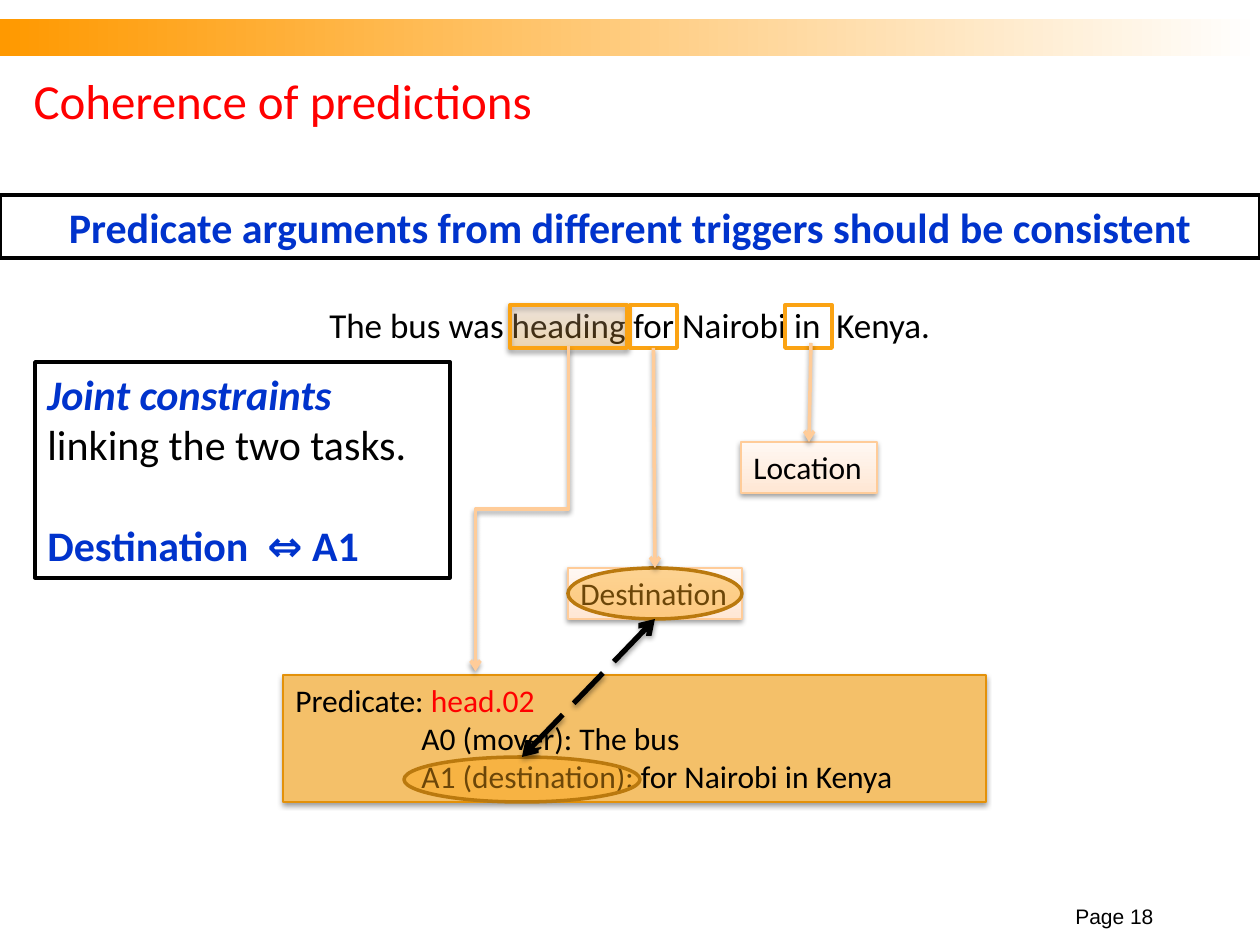
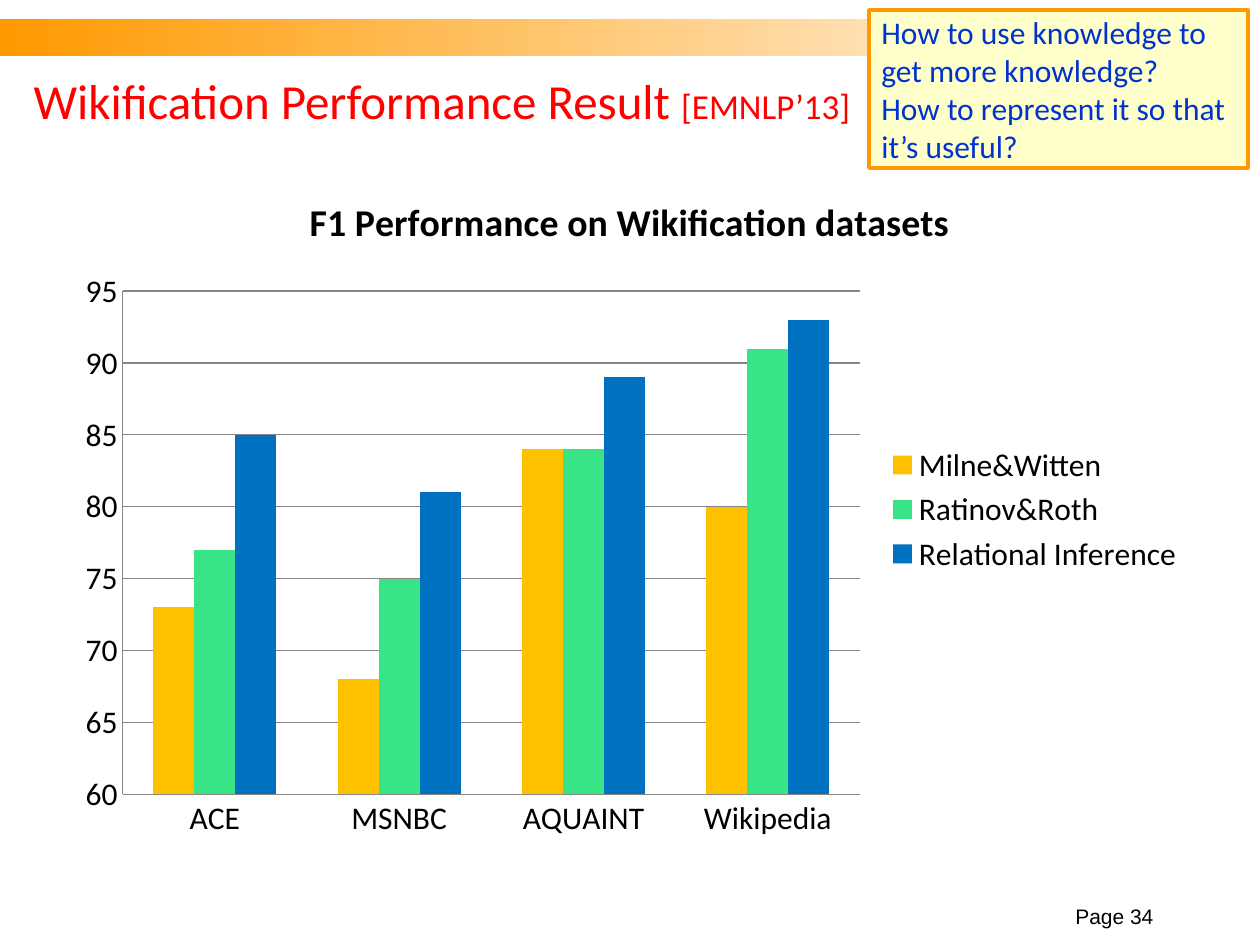
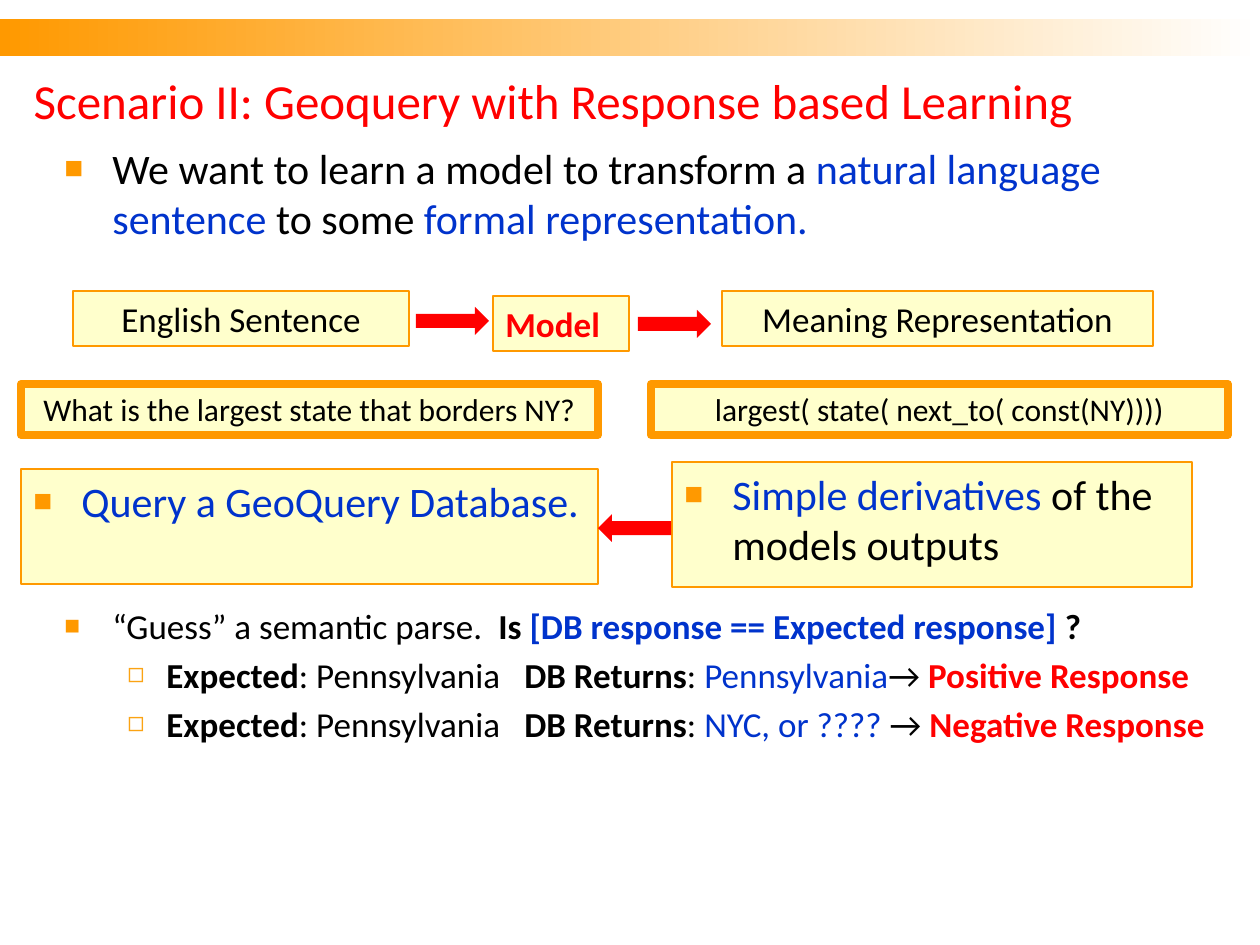
from dataclasses import dataclass
from itertools import zip_longest

from lxml.etree import SubElement
from pptx import Presentation
from pptx.chart.data import CategoryChartData
from pptx.dml.color import RGBColor
from pptx.enum.chart import XL_CHART_TYPE, XL_LEGEND_POSITION, XL_TICK_MARK
from pptx.enum.dml import MSO_LINE
from pptx.enum.shapes import MSO_CONNECTOR as LINK, MSO_SHAPE as SHAPE
from pptx.enum.text import MSO_ANCHOR as ANCHOR, MSO_AUTO_SIZE, PP_ALIGN as ALIGN
from pptx.oxml.ns import qn
from pptx.util import Emu, Pt

SCALE = 914400 / 126  # EMU in one px


@dataclass(frozen=True)
class Theme:
    font: str = "Calibri"
    footer_font: str = "Arial"
    title_size: int = 28
    large: int = 24
    medium: int = 20
    small: int = 18
    footer_size: int = 12
    chart_title_size: float = 21.6
    black: RGBColor = RGBColor.from_string("000000")
    white: RGBColor = RGBColor.from_string("FFFFFF")
    red: RGBColor = RGBColor.from_string("FF0000")
    blue: RGBColor = RGBColor.from_string("0033CC")
    orange: RGBColor = RGBColor.from_string("FF9900")
    amber: RGBColor = RGBColor.from_string("FBA313")
    brown: RGBColor = RGBColor.from_string("BA790E")
    cream: RGBColor = RGBColor.from_string("FFFFCC")
    peach: RGBColor = RGBColor.from_string("FFCC99")
    pink: RGBColor = RGBColor.from_string("FFE7D4")
    pale_pink: RGBColor = RGBColor.from_string("FFF8F3")
    tan: RGBColor = RGBColor.from_string("FFD7BB")
    gold: RGBColor = RGBColor.from_string("F4C069")
    dark_gold: RGBColor = RGBColor.from_string("E3910A")
    gray: RGBColor = RGBColor.from_string("868686")
    bars: tuple = ("FFC000", "38E486", "0070C0")


theme = Theme()
BLACK, RED, BLUE = theme.black, theme.red, theme.blue

# Bullets: sign, colour, size in percent, left margin and hang in px
SQUARE = ("■", theme.orange, 75, 48, 48)
HOLLOW = ("◻", theme.amber, 80, 102, 39)


def write(frame, lines, size, align=ALIGN.LEFT, anchor=ANCHOR.TOP, bullets=(),
          font=theme.font, wrap=True):
    """Fill a frame; each line is a list of (text, colour, style letters)."""
    frame.auto_size = MSO_AUTO_SIZE.NONE
    frame.word_wrap = wrap
    frame.vertical_anchor = anchor
    for number, (spans, bullet) in enumerate(zip_longest(lines, bullets)):
        para = frame.add_paragraph() if number else frame.paragraphs[0]
        para.alignment = align
        if bullet:
            sign, color, percent, margin, hang = bullet
            props = para._p.get_or_add_pPr()
            props.set("marL", str(round(margin * SCALE)))
            props.set("indent", str(round(-hang * SCALE)))
            SubElement(SubElement(props, qn("a:buClr")), qn("a:srgbClr"), val=str(color))
            SubElement(props, qn("a:buSzPct"), val=str(percent * 1000))
            SubElement(props, qn("a:buFont"), typeface=theme.footer_font)
            SubElement(props, qn("a:buChar"), char=sign)
            if number:
                para.space_before = Pt(size * 0.2)
        for text, color, style in spans:
            span = para.add_run()
            span.text = text
            span.font.name = font
            span.font.size = Pt(size)
            span.font.color.rgb = color
            span.font.bold = "b" in style
            span.font.italic = "i" in style


def add_box(page, place, fill=None, line=None, width=0.75, kind=SHAPE.RECTANGLE,
            angle=0, alpha=None):
    """Add a shape; a pair of colours as fill makes a gradient."""
    box = page.shapes.add_shape(kind, *[Emu(round(n * SCALE)) for n in place])
    if fill is None:
        box.fill.background()
    elif isinstance(fill, list):
        box.fill.gradient()
        box.fill.gradient_angle = angle
        for stop, color in zip(box.fill.gradient_stops, fill):
            stop.color.rgb = color
    else:
        box.fill.solid()
        box.fill.fore_color.rgb = fill
    if alpha:
        for color in box.element.spPr.iter(qn("a:srgbClr")):
            SubElement(color, qn("a:alpha"), val=str(alpha * 1000))
    if line is None:
        box.line.fill.background()
    else:
        box.line.color.rgb = line
        box.line.width = Pt(width)
    box.shadow.inherit = False
    return box


deck = Presentation()
deck.slide_width, deck.slide_height = Emu(round(1260 * SCALE)), Emu(round(945 * SCALE))
layout = deck.slide_layouts[5]

# Pages with their titles and page numbers
titles = [
    ([("Coherence of predictions", RED, "")], "Page 18"),
    ([("Wikification Performance Result ", RED, ""), ("[EMNLP’13]", RED, "")], "Page 34"),
    ([("Scenario II: Geoquery with Response based Learning", RED, "")], None),
]
pages = []
for spans, footer in titles:
    page = deck.slides.add_slide(layout)
    title = page.shapes.title
    title.left, title.top, title.width, title.height = [
        Emu(round(n * SCALE)) for n in (21, 63, 1134, 73)]
    write(title.text_frame, [spans], theme.title_size, anchor=ANCHOR.MIDDLE)
    if footer:
        box = page.shapes.add_textbox(*[Emu(round(n * SCALE)) for n in (1040, 903, 126, 32)])
        write(box.text_frame, [[(footer, BLACK, "")]], theme.footer_size, ALIGN.RIGHT,
              ANCHOR.BOTTOM, font=theme.footer_font)
    pages.append(page)
coherence, results, scenario = pages
results.shapes.title.text_frame.paragraphs[0].runs[1].font.size = Pt(theme.medium)

# Shared top band, kept on the layout
band = add_box(coherence, (0, 19, 1260, 37), [theme.orange, theme.white])
layout.shapes.element.insert(2, band.element)

# Coherence: sentence with its marked words
sentence = coherence.shapes.add_textbox(*[Emu(round(n * SCALE)) for n in (63, 297, 1134, 54)])
write(sentence.text_frame, [[("The bus was heading for Nairobi in  Kenya.", BLACK, "")]],
      theme.medium, ALIGN.CENTER)
heading_mark = add_box(coherence, (510, 305, 117, 43), [theme.amber, theme.tan],
                       theme.amber, 2.25, angle=90, alpha=25)
for_mark, in_mark = [add_box(coherence, (left, 305, 47, 43), None, theme.amber, 2.25)
                     for left in (630, 785)]

# Coherence: labels and predicate frame
labels = []
for text, place in [("Location", (741, 442, 136, 51)), ("Destination", (568, 568, 174, 51))]:
    label = add_box(coherence, place, [theme.pink, theme.pale_pink], theme.peach, angle=90)
    write(label.text_frame, [[(text, BLACK, "")]], theme.small, wrap=False)
    labels.append(label)
location, destination = labels

predicate = add_box(coherence, (283, 675, 703, 127), theme.gold, theme.dark_gold)
write(predicate.text_frame, [
    [("Predicate: ", BLACK, ""), ("head.02", RED, "")],
    [("A0 (mover): The bus", BLACK, "")],
    [("A1 (destination): for Nairobi in Kenya", BLACK, "")],
], theme.small)
for para in predicate.text_frame.paragraphs[1:]:
    para._p.get_or_add_pPr().set("marL", str(round(126 * SCALE)))

argument_ring, destination_ring = [
    add_box(coherence, place, theme.amber, theme.brown, 2, SHAPE.OVAL, alpha=43)
    for place in ((404, 757, 236, 45), (568, 568, 174, 51))]

# Coherence: arrows; the elbow is laid flat around its centre and turned
center_x, center_y, length, breadth = 522, 509, 325, 93
elbow_ends = (center_x - length / 2, center_y - breadth / 2,
              center_x + length / 2, center_y + breadth / 2)
arrows = []
for kind, ends, color, width in [
    (LINK.STRAIGHT, (811, 343, 809, 442), theme.peach, 2),
    (LINK.STRAIGHT, (654, 348, 655, 568), theme.peach, 2),
    (LINK.STRAIGHT, (655, 619, 522, 757), BLACK, 3),
    (LINK.ELBOW, elbow_ends, theme.peach, 2),
]:
    arrow = coherence.shapes.add_connector(kind, *[Emu(round(n * SCALE)) for n in ends])
    arrow.line.color.rgb = color
    arrow.line.width = Pt(width)
    arrows.append(arrow)
to_location, to_destination, agreement, to_predicate = arrows
to_location.end_connect(location, 0)
to_destination.begin_connect(for_mark, 2)
to_destination.end_connect(destination, 0)
agreement.begin_connect(destination, 2)
agreement.end_connect(argument_ring, 0)
agreement.line.dash_style = MSO_LINE.LONG_DASH
to_predicate.element.spPr.find(qn("a:xfrm")).set("rot", "5400000")
for arrow in arrows:
    stroke = arrow.element.spPr.find(qn("a:ln"))
    if arrow is agreement:
        SubElement(stroke, qn("a:headEnd"), type="arrow")
    SubElement(stroke, qn("a:tailEnd"), type="arrow")
    SubElement(arrow.element.spPr, qn("a:effectLst"))

# Coherence: soft shadows
for item in [heading_mark, location, destination, predicate, *arrows]:
    effects = item.element.spPr.find(qn("a:effectLst"))
    shadow = SubElement(effects, qn("a:outerShdw"), blurRad="39400", dist="20300",
                        dir="5400000", rotWithShape="0")
    color = SubElement(shadow, qn("a:srgbClr"), val=str(BLACK))
    SubElement(color, qn("a:alpha"), val="38000")

# Coherence: banner and constraint note
banner = add_box(coherence, (0, 195, 1260, 63), theme.white, BLACK, 2)
write(banner.text_frame,
      [[("Predicate arguments from different triggers should be consistent", BLUE, "b")]],
      theme.large, ALIGN.CENTER)
constraints = add_box(coherence, (35, 362, 415, 216), theme.white, BLACK, 2)
write(constraints.text_frame, [
    [("Joint constraints ", BLUE, "bi"), ("linking the two tasks.", BLACK, "")],
    [("Destination  ⇔ A1", BLUE, "b")],
], theme.large)
constraints.text_frame.paragraphs[1].space_before = Pt(29)

# Results: column chart
data = CategoryChartData()
data.categories = ["ACE", "MSNBC", "AQUAINT", "Wikipedia"]
data.add_series("Milne&Witten", (73, 68, 84, 80))
data.add_series("Ratinov&Roth", (77, 75, 84, 91))
data.add_series("Relational Inference", (85, 81, 89, 93))
chart = results.shapes.add_chart(
    XL_CHART_TYPE.COLUMN_CLUSTERED,
    *[Emu(round(n * SCALE)) for n in (63, 168, 1134, 683)], data).chart
chart.font.name = theme.font
chart.font.size = Pt(theme.small)
chart.font.color.rgb = BLACK
chart.has_title = True
chart.chart_title.text_frame.text = "F1 Performance on Wikification datasets"
title_font = chart.chart_title.text_frame.paragraphs[0].runs[0].font
title_font.name = theme.font
title_font.size = Pt(theme.chart_title_size)
title_font.bold = True
title_font.color.rgb = BLACK
chart.has_legend = True
chart.legend.position = XL_LEGEND_POSITION.RIGHT
chart.legend.include_in_layout = False
plot = chart.plots[0]
plot.gap_width = 150
plot.vary_by_categories = False
for series, color in zip(plot.series, theme.bars):
    series.format.fill.solid()
    series.format.fill.fore_color.rgb = RGBColor.from_string(color)
    series.invert_if_negative = False
for axis in (chart.category_axis, chart.value_axis):
    axis.major_tick_mark = axis.minor_tick_mark = XL_TICK_MARK.NONE
    axis.format.line.color.rgb = theme.gray
scores = chart.value_axis
scores.minimum_scale, scores.maximum_scale, scores.major_unit = 60, 95, 5
scores.major_gridlines.format.line.color.rgb = theme.gray

# Results: question note
note = add_box(results, (869, 10, 379, 158), theme.cream, theme.orange, 2)
write(note.text_frame, [
    [("How to use knowledge to get more knowledge?", BLUE, "")],
    [("How to represent it so that it’s useful?", BLUE, "")],
], theme.small, anchor=ANCHOR.MIDDLE)

# Scenario: goal and responses
goal = [[("We want to learn a model to transform a ", BLACK, ""),
         ("natural language sentence", BLUE, ""), (" to some ", BLACK, ""),
         ("formal representation.", BLUE, "")]]
responses = [[("“Guess” a semantic parse.  ", BLACK, ""), ("Is ", BLACK, "b"),
              ("[DB response == Expected response] ", BLUE, "b"), ("?", BLACK, "b")]]
for returned, arrow_text, verdict in [
    ("Pennsylvania", "→ ", "Positive Response"),
    ("NYC, or ???? ", "→ ", "Negative Response"),
]:
    responses.append([("Expected", BLACK, "b"), (": Pennsylvania\t", BLACK, ""),
                      ("DB Returns", BLACK, "b"), (": ", BLACK, ""), (returned, BLUE, ""),
                      (arrow_text, BLACK, ""), (verdict, RED, "b")])
for place, lines, size, bullets in [
    ((52, 136, 1177, 120), goal, theme.large, [SQUARE]),
    ((52, 598, 1177, 165), responses, theme.medium, [SQUARE, HOLLOW, HOLLOW]),
]:
    box = scenario.shapes.add_textbox(*[Emu(round(n * SCALE)) for n in place])
    write(box.text_frame, lines, size, bullets=bullets)
for para in box.text_frame.paragraphs[1:]:
    tabs = SubElement(para._p.get_or_add_pPr(), qn("a:tabLst"))
    SubElement(tabs, qn("a:tab"), pos=str(round(460 * SCALE)), algn="l")

# Scenario: cream boxes
for place, width, spans, size, align, bullets in [
    ((493, 296, 136, 55), 0.75, [("Model", RED, "b")], theme.medium, ALIGN.LEFT, ()),
    ((73, 291, 336, 55), 0.75, [("English Sentence", BLACK, "")],
     theme.medium, ALIGN.CENTER, ()),
    ((722, 291, 431, 55), 0.75, [("Meaning Representation", BLACK, "")],
     theme.medium, ALIGN.CENTER, ()),
    ((21, 384, 577, 51), 4.5, [("What is the largest state that borders NY?", BLACK, "")],
     theme.small, ALIGN.CENTER, ()),
    ((651, 384, 577, 51), 4.5, [("largest( state( next_to( const(NY))))", BLACK, "")],
     theme.small, ALIGN.CENTER, ()),
    ((672, 462, 520, 125), 0.75,
     [("Simple derivatives ", BLUE, ""), ("of the models outputs", BLACK, "")],
     theme.large, ALIGN.LEFT, [SQUARE]),
    ((21, 469, 577, 115), 0.75, [("Query a GeoQuery Database.", BLUE, "")],
     theme.large, ALIGN.LEFT, [SQUARE]),
]:
    box = add_box(scenario, place, theme.cream, theme.orange, width)
    write(box.text_frame, [spans], size, align, bullets=bullets)

# Scenario: block arrows
for left, top, turn in [(416, 307, 0), (638, 310, 0), (598, 514, 180)]:
    block = add_box(scenario, (left, top, 73, 28), RED, kind=SHAPE.RIGHT_ARROW)
    block.rotation = turn

deck.save("out.pptx")
